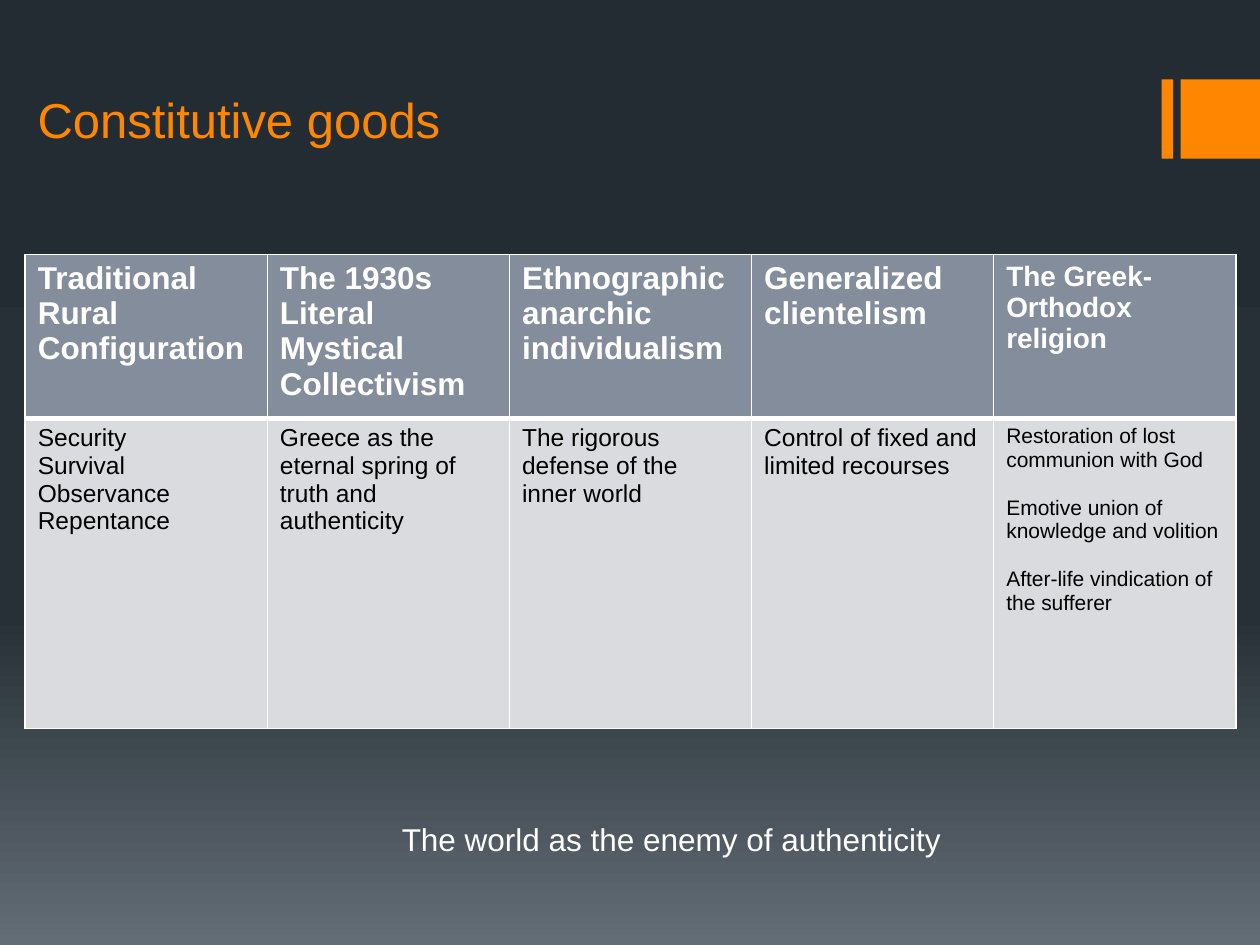
from copy import deepcopy
from pptx import Presentation
from pptx.dml.color import RGBColor
from pptx.enum.shapes import MSO_SHAPE as Shape
from pptx.enum.text import MSO_ANCHOR as Anchor
from pptx.oxml import parse_xml
from pptx.oxml.ns import nsdecls
from pptx.util import Inches, Pt


def color(code):
    return RGBColor.from_string(code)


def write(frame, text, size=18, ink="FFFFFF", bold=False, after=0, wrap=True, anchor=Anchor.TOP):
    frame.word_wrap = wrap
    frame.vertical_anchor = anchor
    frame.text = text
    for para in frame.paragraphs:
        para.space_after = Pt(after)
        font = para.font
        for run in para.runs:
            font = run.font
            font.name = "Arial"
            font.size = Pt(size)
            font.bold = bold
            font.color.rgb = color(ink)


deck = Presentation()
deck.slide_width = Inches(10)
deck.slide_height = Inches(7.5)
slide = deck.slides.add_slide(deck.slide_layouts[6])
shapes = slide.shapes

back = slide.background.fill
back.gradient()
back.gradient_angle = 270
stops = back.gradient_stops
last = stops[1]._gs
last.addnext(deepcopy(last))
shades = [(0, "242C33"), (0.65, "273037"), (1, "636D76")]
for stop, (place, code) in zip(back.gradient_stops, shades):
    stop.position = place
    stop.color.rgb = color(code)

for left, width in [(9.22, 0.09), (9.37, 0.63)]:
    bar = shapes.add_shape(Shape.RECTANGLE, Inches(left), Inches(0.63), Inches(width), Inches(0.63))
    bar.shadow.inherit = False
    bar.fill.solid()
    bar.fill.fore_color.rgb = color("FF8600")
    bar.line.fill.background()

title = shapes.add_textbox(Inches(0.2), Inches(0.36), Inches(8), Inches(0.87))
write(title.text_frame, "Constitutive goods", size=28, ink="FF8600", anchor=Anchor.BOTTOM)

heads = [
    "Traditional\nRural\nConfiguration",
    "The 1930s\nLiteral Mystical Collectivism",
    "Ethnographic anarchic individualism",
    "Generalized clientelism",
    "The Greek-Orthodox religion",
]
goods = [
    "Security\nSurvival\nObservance\nRepentance",
    "Greece as the eternal spring of truth and authenticity",
    "The rigorous defense of the inner world",
    "Control of fixed and limited recourses",
    "Restoration of lost communion with God\n"
    "Emotive union of knowledge and volition\n"
    "After-life vindication of the sufferer",
]
rows = [
    (heads, 1.23, "838D9B", "FFFFFF", True, (18, 16), {"B": 3}),
    (goods, 2.46, "D9DBDE", "000000", False, (14, 12), {"T": 3}),
]
table = shapes.add_table(2, 5, Inches(0.2), Inches(2.02), Inches(9.61), Inches(3.69)).table
for col in table.columns:
    col.width = Inches(9.61 / 5)

for r, (texts, height, fill, ink, bold, sizes, thick) in enumerate(rows):
    table.rows[r].height = Inches(height)
    for c, text in enumerate(texts):
        cell = table.cell(r, c)
        final = c == len(texts) - 1
        after = 14 if final and r == 1 else 0
        write(cell.text_frame, text, size=sizes[final], ink=ink, bold=bold, after=after)
        props = cell._tc.get_or_add_tcPr()
        for side in "LRTB":
            width = Pt(thick.get(side, 1))
            props.append(parse_xml(
                f'<a:ln{side} {nsdecls("a")} w="{width}"><a:solidFill>'
                f'<a:srgbClr val="FFFFFF"/></a:solidFill></a:ln{side}>'))
        cell.fill.solid()
        cell.fill.fore_color.rgb = color(fill)

note = shapes.add_textbox(Inches(3.09), Inches(6.46), Inches(4.52), Inches(0.4))
write(note.text_frame, "The world as the enemy of authenticity", wrap=False)

deck.save("out.pptx")
